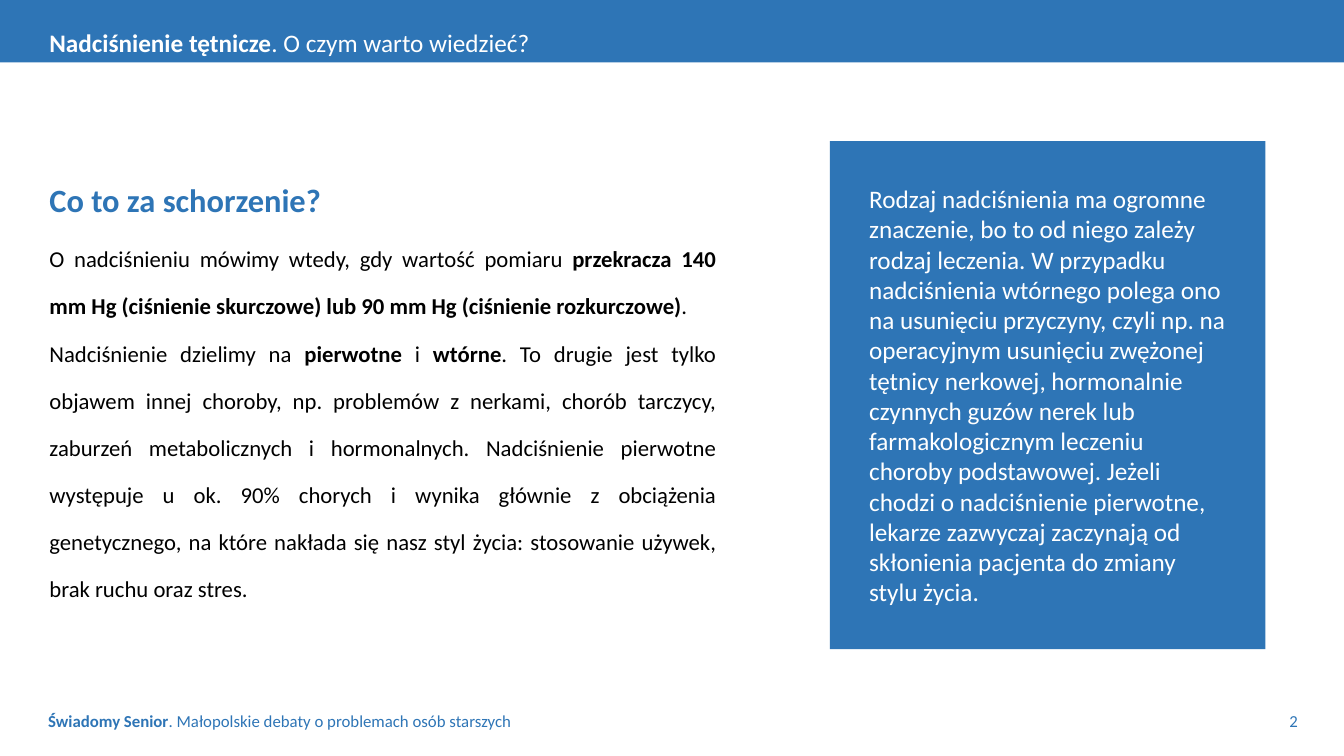
from pptx import Presentation
from pptx import util as u
from pptx.dml.color import RGBColor
from pptx.enum import shapes, text

HUES = {"blue": "2E75B6", "white": "FFFFFF", "black": "000000"}
FACE = "Calibri"
ALIGN = text.PP_ALIGN
MIDDLE = text.MSO_ANCHOR.MIDDLE


def panel(slide, box):
    """Draw a plain blue rectangle in the box."""
    shape = slide.shapes.add_shape(shapes.MSO_SHAPE.RECTANGLE, *map(u.Inches, box))
    shape.shadow.inherit = False
    shape.fill.solid()
    shape.fill.fore_color.rgb = RGBColor.from_string(HUES["blue"])
    shape.line.fill.background()
    return shape


def label(slide, box):
    """Add an empty text box and return its frame."""
    return slide.shapes.add_textbox(*map(u.Inches, box)).text_frame


def setup(frame, insets=(0.1, 0.05, 0.1, 0.05), anchor=text.MSO_ANCHOR.TOP, grow=False):
    """Set wrapping, margins, anchor and growth of a text frame."""
    frame.word_wrap = True
    frame.vertical_anchor = anchor
    (frame.margin_left, frame.margin_top,
     frame.margin_right, frame.margin_bottom) = map(u.Inches, insets)
    if grow:
        frame.auto_size = text.MSO_AUTO_SIZE.SHAPE_TO_FIT_TEXT


def write(para, parts, size, hue, align=ALIGN.LEFT, raised=False):
    """Fill a paragraph with (words, bold) parts in one size and colour."""
    para.alignment = align
    para.font.name = FACE
    para.font.size = u.Pt(size)
    para.font.color.rgb = RGBColor.from_string(HUES[hue])
    for words, bold in parts:
        run = para.add_run()
        run.text = words
        run.font.bold = bold
        if raised:
            run._r.get_or_add_rPr().set("baseline", "30000")


def header(slide, box):
    """Draw the title band across the top."""
    left, top, width, height = box
    panel(slide, box)
    frame = label(slide, (left + 0.49, top + height - 0.4, 11.5, 0.4))
    setup(frame, (0, 0.05, 0.1, 0.05), grow=True)
    write(frame.paragraphs[0], [("Nadciśnienie tętnicze", True),
                                (". O czym warto wiedzieć?", False)], 18, "white")


def footer(slide, box):
    """Place the series name at the left and the page number at the right."""
    left, top, width, height = box
    split = 8.54
    name = label(slide, (left, top, split, height))
    page = label(slide, (left + split, top, width - split, height))
    for frame in (name, page):
        setup(frame, anchor=MIDDLE)
    write(name.paragraphs[0], [
        ("Świadomy Senior", True),
        (". Małopolskie debaty o problemach osób starszych", False)], 12, "blue")
    write(page.paragraphs[0], [("2", False)], 12, "blue", ALIGN.RIGHT)


def story(slide, box):
    """Write the heading and the justified body text."""
    frame = label(slide, box)
    setup(frame, (0, 0, 0, 0), MIDDLE, grow=True)
    rows = [
        (40, "blue", [("Co to za schorzenie?", True)]),
        (28, "black", [
            ("O nadciśnieniu mówimy wtedy, gdy wartość pomiaru ", False),
            ("przekracza 140 mm Hg (ciśnienie skurczowe) lub 90 mm Hg "
             "(ciśnienie rozkurczowe)", True),
            (".", False)]),
        (28, "black", [
            ("Nadciśnienie dzielimy na ", False),
            ("pierwotne", True),
            (" i ", False),
            ("wtórne", True),
            (". To drugie jest tylko objawem innej choroby, np. problemów z nerkami, "
             "chorób tarczycy, zaburzeń metabolicznych i hormonalnych. Nadciśnienie "
             "pierwotne występuje u ok. 90% chorych i wynika głównie z obciążenia "
             "genetycznego, na które nakłada się nasz styl życia: stosowanie używek, "
             "brak ruchu oraz stres.", False)]),
    ]
    for i, (size, hue, parts) in enumerate(rows):
        para = frame.add_paragraph() if i else frame.paragraphs[0]
        write(para, parts, size, hue, ALIGN.JUSTIFY, raised=True)


def aside(slide, box):
    """Draw the blue panel with the note on treatment."""
    frame = panel(slide, box).text_frame
    setup(frame, (0.39,) * 4, MIDDLE, grow=True)
    note = ("Rodzaj nadciśnienia ma ogromne znaczenie, bo to od niego zależy rodzaj "
            "leczenia. W przypadku nadciśnienia wtórnego polega ono na usunięciu "
            "przyczyny, czyli np. na operacyjnym usunięciu zwężonej tętnicy nerkowej, "
            "hormonalnie czynnych guzów nerek lub farmakologicznym leczeniu choroby "
            "podstawowej. Jeżeli chodzi o nadciśnienie pierwotne, lekarze zazwyczaj "
            "zaczynają od skłonienia pacjenta do zmiany stylu życia.")
    write(frame.paragraphs[0], [(note, False)], 18, "white")


def main():
    """Build the slide and save it."""
    deck = Presentation()
    deck.slide_width, deck.slide_height = u.Inches(13.33), u.Inches(7.5)
    slide = deck.slides.add_slide(deck.slide_layouts[6])
    header(slide, (0, 0, 13.33, 0.62))
    footer(slide, (0.38, 6.95, 12.59, 0.4))
    story(slide, (0.49, 2.28, 6.61, 3.28))
    aside(slide, (8.23, 1.4, 4.32, 5.04))
    deck.save("out.pptx")


if __name__ == "__main__":
    main()
